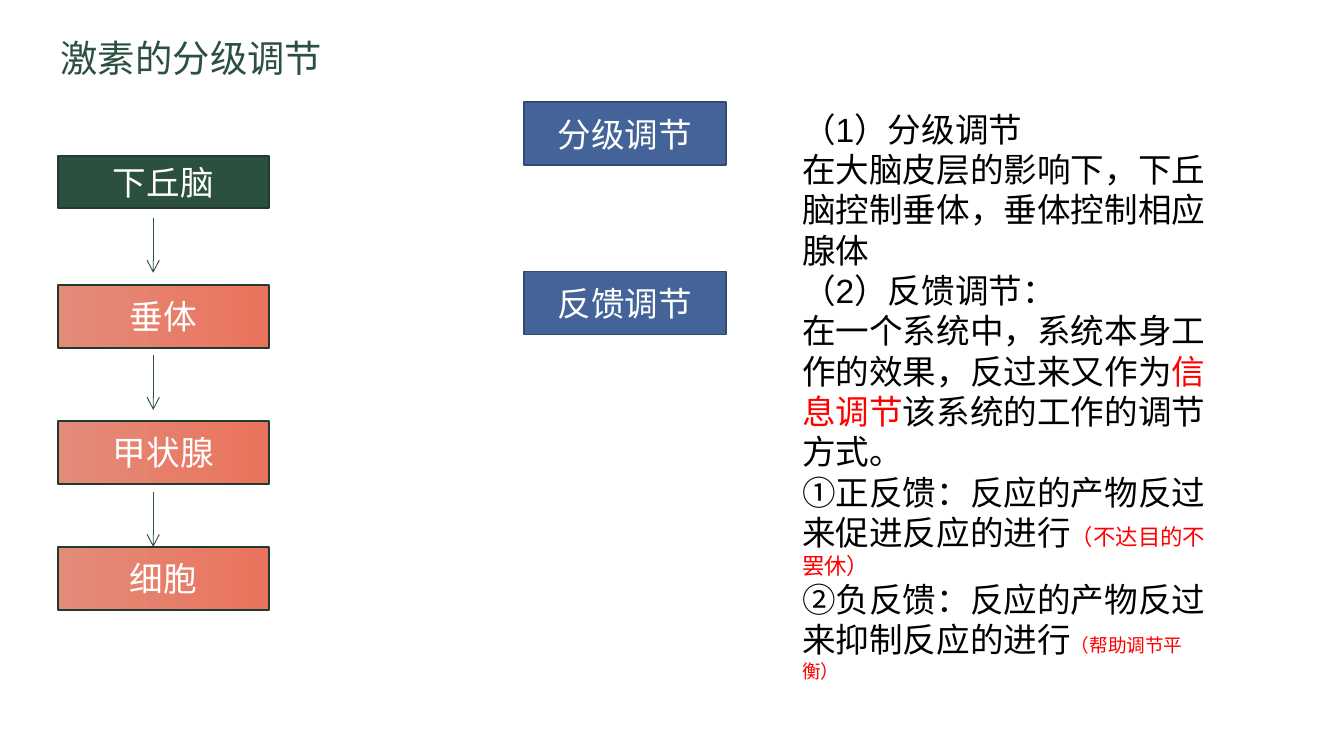
from lxml.etree import SubElement
from pptx import Presentation
from pptx.dml.color import RGBColor as RGB
from pptx.enum.lang import MSO_LANGUAGE_ID as Lang
from pptx.enum.shapes import MSO_CONNECTOR as Conn, MSO_SHAPE as Shape
from pptx.enum.text import MSO_ANCHOR as Anchor, MSO_AUTO_SIZE as Fit, PP_ALIGN as Align
from pptx.oxml.ns import qn
from pptx.util import Inches, Pt

GREEN = RGB(0x2C, 0x50, 0x40)
EDGE = RGB(0x21, 0x3B, 0x2F)
BLUE = RGB(0x44, 0x63, 0x98)
NAVY = RGB(0x32, 0x49, 0x70)
ROSE = RGB(0xE3, 0x8B, 0x79)
CORAL = RGB(0xEA, 0x73, 0x5D)
RED = RGB(0xFF, 0, 0)
BLACK = RGB(0, 0, 0)
WHITE = RGB(0xFF, 0xFF, 0xFF)

TITLE = "激素的分级调节"
CHAIN = [
    ("下丘脑", 1.16, 0.39, (GREEN,)),
    ("垂体", 2.12, 0.47, (ROSE, CORAL)),
    ("甲状腺", 3.13, 0.47, (ROSE, CORAL)),
    ("细胞", 4.07, 0.47, (ROSE, CORAL)),
]
MODES = ["分级调节", "反馈调节"]
BODY = ("Arial", 18, BLACK)
MARK = ("Calibri", 18, BLACK)
NOTES = [
    [("（1）分级调节", BODY)],
    [("在大脑皮层的影响下，下丘脑控制垂体，垂体控制相应腺体", BODY)],
    [("（2）反馈调节：", BODY)],
    [("在一个系统中，系统本身工作的效果，反过来又作为", BODY),
     ("信息调节", ("Arial", 18, RED)),
     ("该系统的工作的调节方式。", BODY)],
    [("①", MARK), ("正反馈：反应的产物反过来促进反应的进行", BODY),
     ("（不达目的不罢休）", ("Arial", 12, RED))],
    [("②", MARK), ("负反馈：反应的产物反过来抑制反应的进行", BODY),
     ("（帮助调节平衡）", ("Arial", 10, RED))],
]


def style(run, name, size, color):
    font = run.font
    font.name, font.size, font.color.rgb = name, Pt(size), color
    font.language_id = Lang.SIMPLIFIED_CHINESE


def add_box(label, left, top, width, height, fills, edge):
    box = shapes.add_shape(Shape.RECTANGLE, *map(Inches, (left, top, width, height)))
    box.shadow.inherit = False
    if len(fills) == 1:
        box.fill.solid()
        box.fill.fore_color.rgb = fills[0]
    else:
        box.fill.gradient()
        box.fill.gradient_angle = 0
        for stop, color in zip(box.fill.gradient_stops, fills):
            stop.color.rgb = color
    box.line.color.rgb, box.line.width = edge, Pt(1)
    frame = box.text_frame
    frame.text = label
    frame.vertical_anchor = Anchor.MIDDLE
    para = frame.paragraphs[0]
    para.alignment = Align.CENTER
    style(para.runs[0], "Arial", 18, WHITE)


def add_arrow(x, top, length):
    arrow = shapes.add_connector(Conn.STRAIGHT, *map(Inches, (x, top, x, top + length)))
    arrow.line.color.rgb, arrow.line.width = GREEN, Pt(0.5)
    props = arrow._element.spPr
    SubElement(props.find(qn("a:ln")), qn("a:tailEnd"), type="arrow")
    SubElement(props, qn("a:effectLst"))


deck = Presentation()
deck.slide_width = Inches(10)
deck.slide_height = deck.slide_width * 9 // 16
slide = deck.slides.add_slide(deck.slide_layouts[5])
shapes = slide.shapes

title = shapes.title
title.left, title.top, title.width, title.height = map(Inches, (0.35, 0.21, 4.26, 0.44))
frame = title.text_frame
frame.text = TITLE
frame.vertical_anchor = Anchor.TOP
frame.auto_size = Fit.SHAPE_TO_FIT_TEXT
frame.paragraphs[0].alignment = Align.LEFT
style(frame.paragraphs[0].runs[0], "Noto Sans CJK SC", 20, GREEN)

frame = shapes.add_textbox(*map(Inches, (5.87, 0.76, 3.26, 4.24))).text_frame
frame.word_wrap = True
frame.auto_size = Fit.SHAPE_TO_FIT_TEXT
for i, parts in enumerate(NOTES):
    para = frame.add_paragraph() if i else frame.paragraphs[0]
    for text, look in parts:
        run = para.add_run()
        run.text = text
        style(run, *look)

for i, label in enumerate(MODES):
    add_box(label, 3.9, 0.76 + 1.26 * i, 1.5, 0.47, (BLUE,), NAVY)
for label, top, height, fills in CHAIN:
    add_box(label, 0.43, top, 1.57, height, fills, EDGE)
for i in range(len(CHAIN) - 1):
    add_arrow(1.14, 1.62 + 1.02 * i, 0.41)

deck.save("out.pptx")
